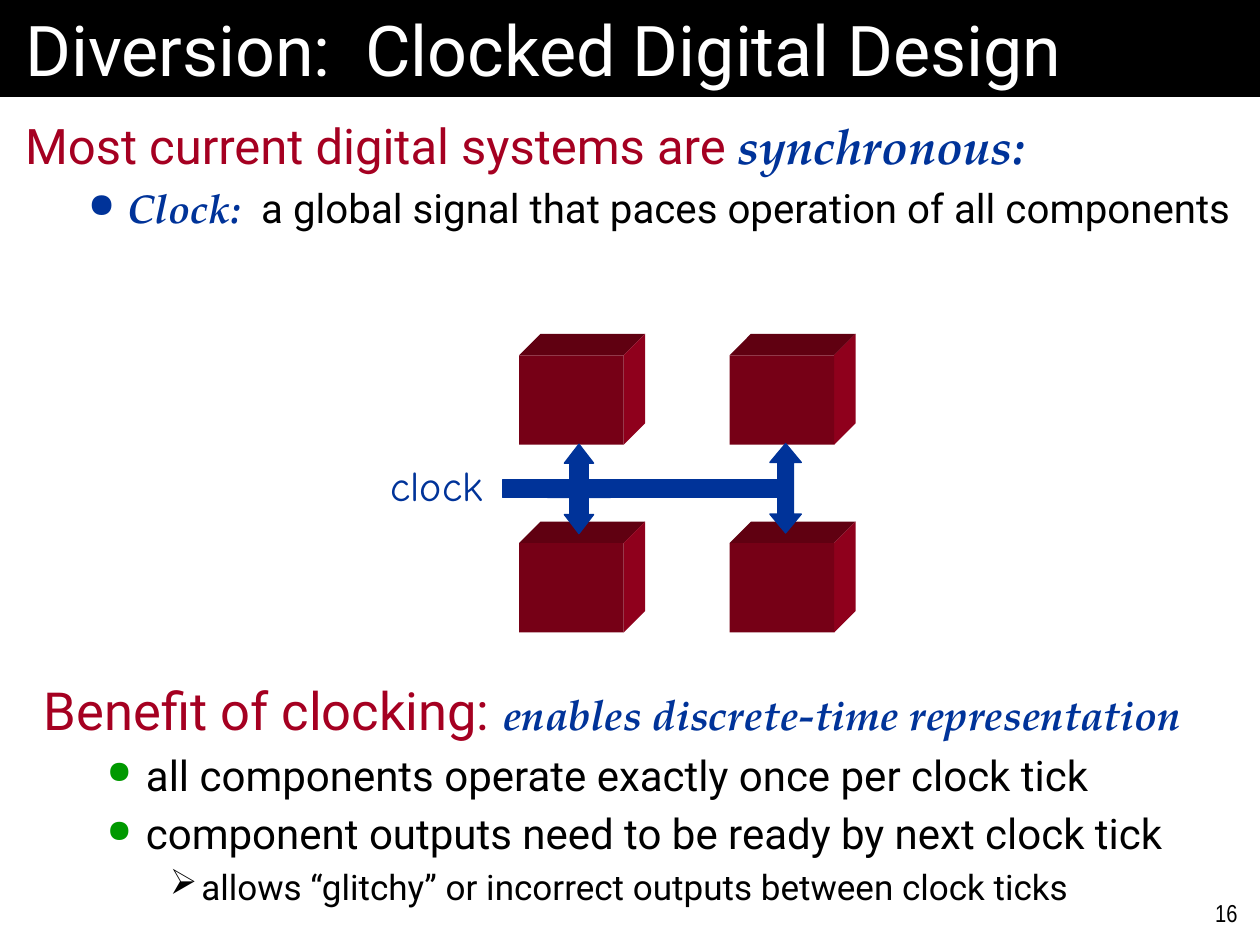
import pptx
import pptx.util
import pptx.dml.color
import pptx.enum.shapes
import pptx.enum.text
import pptx.oxml
import pptx.oxml.ns
from dataclasses import dataclass

Inches = pptx.util.Inches
Pt = pptx.util.Pt
Shapes = pptx.enum.shapes.MSO_SHAPE
Align = pptx.enum.text.PP_ALIGN
Anchor = pptx.enum.text.MSO_ANCHOR


@dataclass(frozen=True)
class Theme:
    black: str = "000000"
    white: str = "FFFFFF"
    red: str = "A50021"
    blue: str = "003399"
    green: str = "009900"
    cube_front: str = "760016"
    cube_top: str = "600011"
    cube_side: str = "8F001C"
    sans: str = "Roboto"
    serif: str = "TeX Gyre Pagella"
    hand: str = "Comic Neue"
    narrow: str = "Arial Narrow"
    title: int = 40
    benefit: int = 30
    heading: int = 28
    body: int = 24
    clock: int = 23
    detail: int = 20
    number: int = 14


def color(value):
    return pptx.dml.color.RGBColor.from_string(value)


class SlideBuilder:
    def __init__(self, slide, theme):
        self.slide = slide
        self.theme = theme

    def run(self, text, size, fill, font=None, emphasis=False):
        values = {"name": font or self.theme.sans, "size": Pt(size),
                  "bold": emphasis, "italic": emphasis}
        return text, values, fill

    def emphasis(self, text, size):
        return self.run(text, size, self.theme.blue, self.theme.serif, True)

    def paragraph(self, runs, margin=0, indent=0, before=0, bullet=None,
                  level=0, align=Align.LEFT):
        return {"runs": runs, "margin": margin, "indent": indent, "bullet": bullet,
                "format": {"space_before": Pt(before), "level": level, "alignment": align}}

    def heading(self, *runs):
        return self.paragraph(runs, 0.38, -0.38, 6)

    def bullet(self, *runs, fill, scale):
        return self.paragraph(runs, 0.81, -0.31, 4.8, ("●", fill, scale), 1)

    def detail(self, *runs):
        return self.paragraph(runs, 1.25, -0.25, 4, ("➢", self.theme.black, 100), 2)

    def fill_text(self, shape, paragraphs, inset=(0.1, 0.05), anchor=Anchor.TOP, wrap=True):
        frame = shape.text_frame
        horizontal, vertical = map(Inches, inset)
        values = {"margin_left": horizontal, "margin_right": horizontal,
                  "margin_top": vertical, "margin_bottom": vertical,
                  "vertical_anchor": anchor, "word_wrap": wrap}
        for name, value in values.items():
            setattr(frame, name, value)
        for index, item in enumerate(paragraphs):
            paragraph = frame.paragraphs[0] if index == 0 else frame.add_paragraph()
            for name, value in item["format"].items():
                setattr(paragraph, name, value)
            properties = paragraph._p.get_or_add_pPr()
            properties.set("marL", str(Inches(item["margin"])))
            properties.set("indent", str(Inches(item["indent"])))
            if item["bullet"]:
                self.mark(properties, *item["bullet"])
            for text, font, fill in item["runs"]:
                run = paragraph.add_run()
                run.text = text
                for name, value in font.items():
                    setattr(run.font, name, value)
                run.font.color.rgb = color(fill)

    def mark(self, properties, character, fill, scale):
        namespace = pptx.oxml.ns.nsdecls("a")
        for xml in (f'<a:buClr {namespace}><a:srgbClr val="{fill}"/></a:buClr>',
                    f'<a:buSzPct {namespace} val="{scale * 1000}"/>',
                    f'<a:buChar {namespace} char="{character}"/>'):
            properties.append(pptx.oxml.parse_xml(xml))

    def text(self, box, paragraphs, **options):
        shape = self.slide.shapes.add_textbox(*map(Inches, box))
        self.fill_text(shape, paragraphs, **options)

    def paint(self, shape, fill, line=None):
        shape.shadow.inherit = False
        shape.fill.solid()
        shape.fill.fore_color.rgb = color(fill)
        if line:
            shape.line.color.rgb = color(line)
            shape.line.width = Pt(0.75)
        else:
            shape.line.fill.background()

    def shape(self, kind, box, fill, line=None, rotation=0, adjustments=()):
        shape = self.slide.shapes.add_shape(kind, *map(Inches, box))
        self.paint(shape, fill, line)
        shape.rotation = rotation
        for index, value in enumerate(adjustments):
            shape.adjustments[index] = value
        return shape

    def polygon(self, points, fill):
        points = [(Inches(x), Inches(y)) for x, y in points]
        builder = self.slide.shapes.build_freeform(*points[0], scale=1.0)
        builder.add_line_segments(points[1:], close=True)
        self.paint(builder.convert_to_shape(), fill)

    def cube(self, left, top, width=0.83, height=0.71, depth=0.17):
        right, bottom = left + width, top + height
        back_right, back_top = right + depth, top - depth
        self.polygon([(left, top), (left + depth, back_top),
                      (back_right, back_top), (right, top)], self.theme.cube_top)
        self.polygon([(right, top), (back_right, back_top),
                      (back_right, bottom - depth), (right, bottom)], self.theme.cube_side)
        self.shape(Shapes.RECTANGLE, (left, top, width, height), self.theme.cube_front)


def main():
    presentation = pptx.Presentation()
    presentation.slide_width = Inches(10)
    presentation.slide_height = Inches(7.5)
    slide = presentation.slides.add_slide(presentation.slide_layouts[6])
    theme = Theme()
    builder = SlideBuilder(slide, theme)
    run = builder.run

    builder.text((9.5, 7.08, 0.42, 0.33), [builder.paragraph(
        [run("16", theme.number, theme.black, theme.narrow)], before=7, align=Align.RIGHT)])

    title = builder.shape(Shapes.RECTANGLE, (0, 0, 10, 0.77), theme.black)
    builder.fill_text(title, [builder.paragraph(
        [run("Diversion:  Clocked Digital Design", theme.title, theme.white)])],
        inset=(0.2, 0.05))

    builder.text((0, 0.77, 10, 6.73), [
        builder.heading(run("Most current digital systems are ", theme.heading, theme.red),
                        builder.emphasis("synchronous:", theme.heading)),
        builder.bullet(builder.emphasis("Clock:  ", theme.clock),
                       run("a global signal that paces operation of all components",
                           theme.clock, theme.black),
                       fill=theme.blue, scale=85),
    ], inset=(0.2, 0.15))

    for left in (4.12, 5.79):
        for top in (2.82, 4.31):
            builder.cube(left, top)

    builder.shape(Shapes.LEFT_RIGHT_ARROW_CALLOUT, (4.24, 3.63, 0.71, 0.5), theme.blue,
                  theme.blue, 90, (0.292, 0.233, 0.302, 0.194))
    builder.shape(Shapes.LEFT_RIGHT_ARROW, (5.88, 3.75, 0.71, 0.25), theme.blue,
                  theme.blue, 90, (0.5, 0.6))
    builder.shape(Shapes.RECTANGLE, (3.99, 3.81, 2.18, 0.14), theme.blue, theme.blue)
    builder.text((3, 3.6, 0.99, 0.5), [builder.paragraph(
        [run("clock", theme.body, theme.blue, theme.hand)])], wrap=False)

    ticks = ("all components operate exactly once per clock tick",
             "component outputs need to be ready by next clock tick")
    builder.text((0.25, 1.25, 9.49, 6), [
        builder.heading(run("Benefit of clocking: ", theme.benefit, theme.red),
                        builder.emphasis("enables discrete-time representation", theme.body)),
        *[builder.bullet(run(tick, theme.body, theme.black), fill=theme.green, scale=75)
          for tick in ticks],
        builder.detail(run("allows “glitchy” or incorrect outputs between clock ticks",
                           theme.detail, theme.black)),
    ], anchor=Anchor.BOTTOM)

    presentation.save("out.pptx")


if __name__ == "__main__":
    main()
